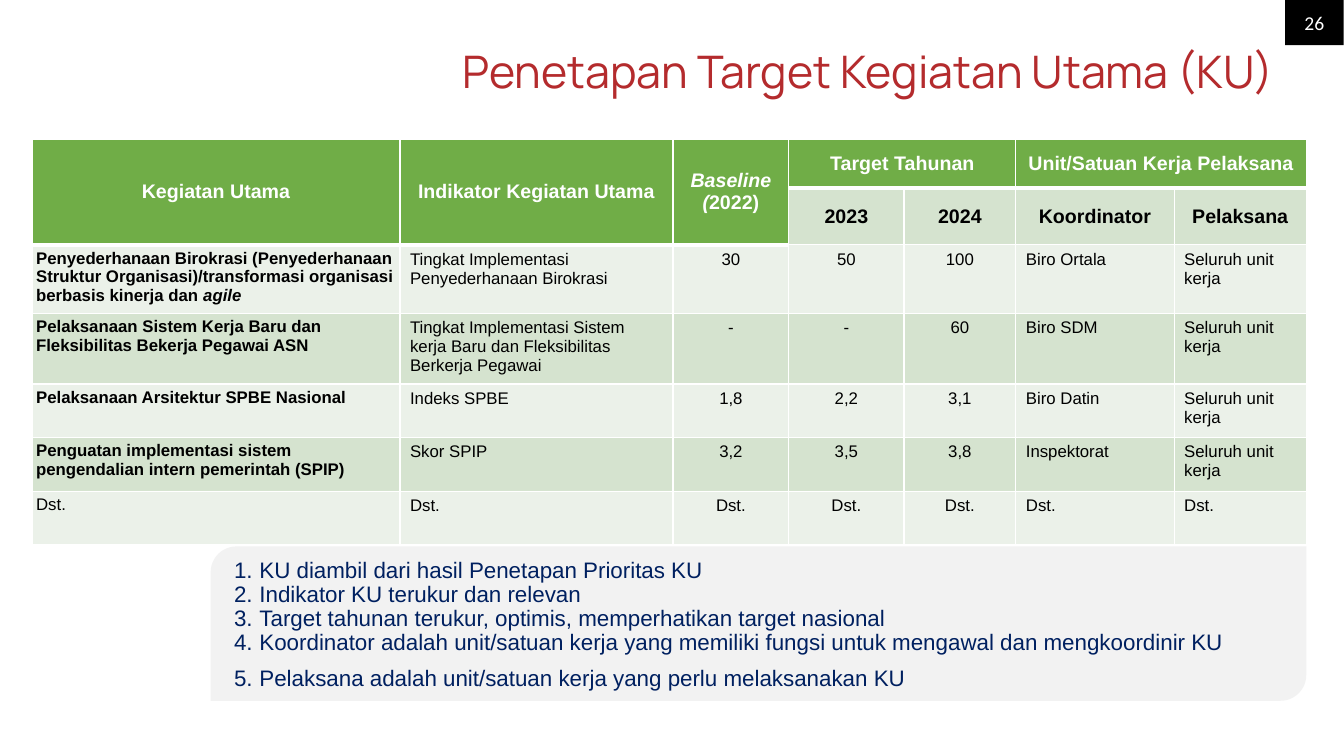
from lxml import etree
from pptx import Presentation
from pptx.dml.color import RGBColor
from pptx.enum import shapes, text
from pptx.oxml.ns import qn
from pptx.util import Cm, Pt

COLORS = {"title": "B42B2D", "black": "000000", "white": "FFFFFF", "header": "70AD47",
          "band": "D5E3CF", "light": "EBF1E9", "panel": "F2F2F2", "navy": "002060"}
TITLE = "Penetapan Target Kegiatan Utama (KU)"
PAGE = "26"
ROWS = [
    ["Kegiatan Utama", "Indikator Kegiatan Utama", "*Baseline*\n*(*2022)",
     "Target Tahunan", "", "Unit/Satuan Kerja Pelaksana", ""],
    ["", "", "", "2023", "2024", "Koordinator", "Pelaksana"],
    ["Penyederhanaan Birokrasi (Penyederhanaan Struktur Organisasi)/transformasi organisasi "
     "berbasis kinerja dan *agile*", "Tingkat Implementasi Penyederhanaan Birokrasi",
     "30", "50", "100", "Biro Ortala", "Seluruh unit kerja"],
    ["Pelaksanaan Sistem Kerja Baru dan Fleksibilitas Bekerja Pegawai ASN",
     "Tingkat Implementasi Sistem kerja Baru dan Fleksibilitas Berkerja Pegawai",
     "-", "-", "60", "Biro SDM", "Seluruh unit kerja"],
    ["Pelaksanaan Arsitektur SPBE Nasional", "Indeks SPBE",
     "1,8", "2,2", "3,1", "Biro Datin", "Seluruh unit kerja"],
    ["Penguatan implementasi sistem pengendalian intern pemerintah (SPIP)", "Skor SPIP",
     "3,2", "3,5", "3,8", "Inspektorat", "Seluruh unit kerja"],
    ["Dst."] * 7,
]
MERGES = [(0, 0, 1, 0), (0, 1, 1, 1), (0, 2, 1, 2), (0, 3, 0, 4), (0, 5, 0, 6)]
COL_WIDTHS = [9.27, 6.88, 2.92, 2.9, 2.82, 3.99, 3.33]
ROW_HEIGHTS = [1.22, 1.02, 1.7, 1.78, 1.35, 1.35, 1.35]
NOTES = [
    "KU diambil dari hasil Penetapan Prioritas KU",
    "Indikator KU terukur dan relevan",
    "Target tahunan terukur, optimis, memperhatikan target nasional",
    "Koordinator adalah unit/satuan kerja yang memiliki fungsi untuk mengawal dan mengkoordinir KU",
    "Pelaksana adalah unit/satuan kerja yang perlu melaksanakan KU",
]
ALIGN = text.PP_ALIGN


def rgb(name):
    return RGBColor.from_string(COLORS[name])


def style(p, size, font, color, align, bold=None):
    p.alignment = align
    p.font.size, p.font.name, p.font.bold = Pt(size), font, bold
    p.font.color.rgb = rgb(color)


def add_box(slide, kind, left, top, width, height, fill):
    sp = slide.shapes.add_shape(kind, Cm(left), Cm(top), Cm(width), Cm(height))
    sp.shadow.inherit = False
    sp.fill.solid()
    sp.fill.fore_color.rgb = rgb(fill)
    sp.line.fill.background()
    return sp


def set_borders(cell, top, bottom):
    tc_pr = cell._tc.get_or_add_tcPr()
    for side, width in (("L", 1), ("R", 1), ("T", top), ("B", bottom)):
        ln = etree.SubElement(tc_pr, qn(f"a:ln{side}"), w=str(Pt(width)))
        fill = etree.SubElement(ln, qn("a:solidFill"))
        etree.SubElement(fill, qn("a:srgbClr"), val=COLORS["white"])


def fill_cell(cell, row, col):
    heading = row < 2
    main = row == 0 or (row == 1 and col < 3)
    thick_row = 1 if col < 3 else 0
    set_borders(cell, 3 if row == thick_row + 1 else 1, 3 if row in (0, thick_row) else 1)
    cell.fill.solid()
    cell.fill.fore_color.rgb = rgb("header" if main else "band" if row % 2 else "light")
    if heading:
        cell.vertical_anchor = text.MSO_ANCHOR.MIDDLE
    elif col == 0:
        cell.margin_left = cell.margin_right = cell.margin_top = cell.margin_bottom = Cm(0.1)
    if cell.is_spanned:
        return
    tf = cell.text_frame
    for i, line in enumerate(ROWS[row][col].split("\n")):
        p = tf.add_paragraph() if i else tf.paragraphs[0]
        style(p, 14 if heading else 12, "Arial", "white" if main else "black",
              ALIGN.CENTER if heading or 2 <= col <= 4 else ALIGN.LEFT,
              heading or (col == 0 and row < len(ROWS) - 1))
        for j, part in enumerate(line.split("*")):
            if part:
                r = p.add_run()
                r.text = part
                if j % 2:
                    r.font.italic = True


def add_targets(slide):
    frame = slide.shapes.add_table(len(ROWS), len(COL_WIDTHS), Cm(0.81), Cm(3.51),
                                   Cm(sum(COL_WIDTHS)), Cm(sum(ROW_HEIGHTS)))
    table = frame.table
    for column, width in zip(table.columns, COL_WIDTHS):
        column.width = Cm(width)
    for table_row, height in zip(table.rows, ROW_HEIGHTS):
        table_row.height = Cm(height)
    for r1, c1, r2, c2 in MERGES:
        table.cell(r1, c1).merge(table.cell(r2, c2))
    for row in range(len(ROWS)):
        for col in range(len(COL_WIDTHS)):
            fill_cell(table.cell(row, col), row, col)


def add_notes_panel(slide):
    sp = add_box(slide, shapes.MSO_SHAPE.ROUND_2_DIAG_RECTANGLE, 5.31, 13.77, 27.61, 3.89, "panel")
    tf = sp.text_frame
    tf.vertical_anchor = text.MSO_ANCHOR.TOP
    for i, note in enumerate(NOTES):
        p = tf.add_paragraph() if i else tf.paragraphs[0]
        p.text = note
        p.line_spacing = 0.9
        p.space_after = Pt(8 if i >= 3 else 0)
        p_pr = p._p.get_or_add_pPr()
        p_pr.set("marL", str(Cm(0.79)))
        p_pr.set("indent", str(Cm(-0.64)))
        etree.SubElement(p_pr, qn("a:buFont"), typeface="+mj-lt")
        etree.SubElement(p_pr, qn("a:buAutoNum"), type="arabicPeriod")
        style(p, 16, "Arial", "navy", ALIGN.JUSTIFY)


def main():
    """Build the slide with the annual targets of the main activities."""
    prs = Presentation()
    prs.slide_width, prs.slide_height = Cm(33.87), Cm(19.05)
    slide = prs.slides.add_slide(prs.slide_layouts[6])

    tf = slide.shapes.add_textbox(Cm(8.48), Cm(1.14), Cm(23.9), Cm(2.03)).text_frame
    tf.word_wrap = True
    p = tf.paragraphs[0]
    p.text = TITLE
    p.line_spacing = 0.9
    style(p, 32, "Manrope", "title", ALIGN.RIGHT)

    sp = add_box(slide, shapes.MSO_SHAPE.RECTANGLE, 32.39, 0, 1.47, 1.14, "black")
    p = sp.text_frame.paragraphs[0]
    p.text = PAGE
    style(p, 14, "Calibri", "white", ALIGN.CENTER)

    add_targets(slide)
    add_notes_panel(slide)
    prs.save("out.pptx")


if __name__ == "__main__":
    main()
